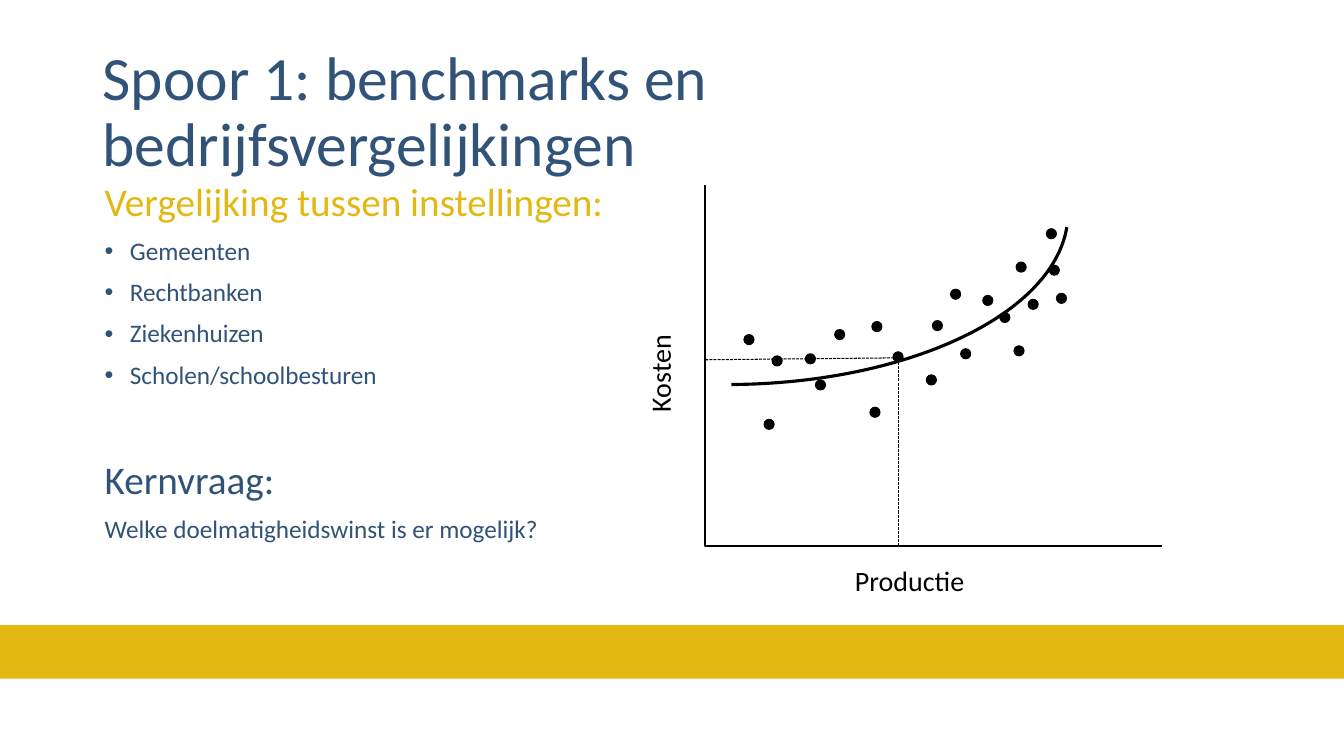
from lxml import etree
from pptx import Presentation
from pptx.dml.color import RGBColor
from pptx.enum.dml import MSO_LINE
from pptx.enum.shapes import MSO_CONNECTOR, MSO_SHAPE
from pptx.enum.text import MSO_ANCHOR
from pptx.oxml.ns import qn
from pptx.util import Pt

STRAIGHT = MSO_CONNECTOR.STRAIGHT
RECTANGLE, OVAL, ARC = MSO_SHAPE.RECTANGLE, MSO_SHAPE.OVAL, MSO_SHAPE.ARC
TOP, MIDDLE = MSO_ANCHOR.TOP, MSO_ANCHOR.MIDDLE
SHORT_DASH = MSO_LINE.SQUARE_DOT

THEME = {
    "font": "Calibri",
    "blue": RGBColor(0x31, 0x53, 0x78),
    "gold": RGBColor(0xE3, 0xB8, 0x13),
    "black": RGBColor(0, 0, 0),
    "title": 44,
    "heading": 28,
    "body": 18,
    "axis": 20,
}

# Each paragraph: text, size, colour and, where needed, spacing and bullet.
TITLE = [{"text": "Spoor 1: benchmarks en bedrijfsvergelijkingen",
          "size": "title", "color": "blue"}]
INSTITUTIONS = ["Gemeenten", "Rechtbanken", "Ziekenhuizen", "Scholen/schoolbesturen"]
BODY = [
    {"text": "Vergelijking tussen instellingen:", "size": "heading", "color": "gold",
     "before": 0},
    *({"text": name, "size": "body", "color": "blue", "before": 10, "bullet": True}
      for name in INSTITUTIONS),
    {"text": "Kernvraag:", "size": "heading", "color": "blue", "before": 50.8},
    {"text": "Welke doelmatigheidswinst is er mogelijk?", "size": "body",
     "color": "blue", "before": 10},
]
X_LABEL = [{"text": "Productie", "size": "axis", "color": "black"}]
Y_LABEL = [{"text": "Kosten", "size": "axis", "color": "black"}]

# Left and top of each observation in the scatter plot.
DOT_SIZE = 7.2
DOTS = [
    (531.4, 239), (545.8, 299.5), (551.5, 254.2), (575.3, 252.7), (582.5, 271.4),
    (596.2, 235.4), (621.4, 290.9), (622.8, 229.7), (637.9, 251.3), (661.7, 267.8),
    (666, 229), (679, 206.6), (686.2, 249.1), (702, 211), (714.2, 223.2),
    (724.3, 247), (725.8, 187.2), (734.4, 213.8), (747.4, 163.4), (749.5, 189.4),
    (754.6, 209.5),
]
AXIS_LEFT, AXIS_TOP, AXIS_RIGHT, AXIS_BOTTOM = 503.3, 132.5, 830.2, 390.2
MARK_X = 641.5
GUIDES = [
    ((MARK_X, 258.5), (MARK_X, AXIS_BOTTOM)),
    ((MARK_X, 255.6), (AXIS_LEFT, 257)),
]
CURVE_BOX = (396.7, -91.4, 244.8, 487.4)
CURVE_ANGLES = (272.36, 358.48)
ADJUSTMENT_PER_DEGREE = 0.6


def add_bullet(paragraph):
    properties = paragraph._p.get_or_add_pPr()
    properties.set("marL", str(Pt(18)))
    properties.set("indent", str(-Pt(18)))
    etree.SubElement(properties, qn("a:buFont")).set("typeface", "Arial")
    etree.SubElement(properties, qn("a:buChar")).set("char", "•")


def add_text(slide, box, paragraphs, line_spacing=1.0, **frame_format):
    shape = slide.shapes.add_textbox(*map(Pt, box))
    frame = shape.text_frame
    for name, value in {"word_wrap": True, "vertical_anchor": TOP, **frame_format}.items():
        setattr(frame, name, value)
    for index, content in enumerate(paragraphs):
        paragraph = frame.add_paragraph() if index else frame.paragraphs[0]
        paragraph.line_spacing = line_spacing
        paragraph.space_before = Pt(content.get("before", 0))
        if content.get("bullet"):
            add_bullet(paragraph)
        run = paragraph.add_run()
        run.text = content["text"]
        run.font.name = THEME["font"]
        run.font.size = Pt(THEME[content["size"]])
        run.font.color.rgb = THEME[content["color"]]
    return shape


def set_line(shape, width):
    shape.line.color.rgb = THEME["black"]
    shape.line.width = Pt(width)


def add_filled(slide, kind, box, color):
    shape = slide.shapes.add_shape(kind, *map(Pt, box))
    shape.shadow.inherit = False
    shape.fill.solid()
    shape.fill.fore_color.rgb = color
    shape.line.fill.background()
    return shape


def add_axes(slide):
    builder = slide.shapes.build_freeform(Pt(AXIS_LEFT), Pt(AXIS_TOP))
    builder.add_line_segments(
        [(Pt(AXIS_LEFT), Pt(AXIS_BOTTOM)), (Pt(AXIS_RIGHT), Pt(AXIS_BOTTOM))],
        close=False)
    axes = builder.convert_to_shape()
    axes.shadow.inherit = False
    axes.fill.background()
    set_line(axes, 1.5)


def add_cost_curve(slide):
    curve = slide.shapes.add_shape(ARC, *map(Pt, CURVE_BOX))
    curve.shadow.inherit = False
    curve.fill.background()
    curve.rotation = 90
    for index, angle in enumerate(CURVE_ANGLES):
        curve.adjustments[index] = angle * ADJUSTMENT_PER_DEGREE
    set_line(curve, 2.25)


def add_guide(slide, start, end):
    guide = slide.shapes.add_connector(STRAIGHT, *map(Pt, start + end))
    set_line(guide, 0.75)
    guide.line.dash_style = SHORT_DASH
    etree.SubElement(guide._element.spPr, qn("a:effectLst"))


def main():
    presentation = Presentation()
    presentation.slide_width, presentation.slide_height = Pt(960), Pt(540)
    slide = presentation.slides.add_slide(presentation.slide_layouts[6])

    add_filled(slide, RECTANGLE, (0, 446.6, 960, 38.2), THEME["gold"])
    add_text(slide, (66.2, 28.8, 828, 104.4), TITLE, 0.9, vertical_anchor=MIDDLE)
    add_text(slide, (67.7, 126.7, 375.8, 310.3), BODY, 0.9)

    add_axes(slide)
    add_text(slide, (610.6, 402.5, 80.6, 24.5), X_LABEL, word_wrap=False,
             margin_left=0, margin_right=0, margin_top=0, margin_bottom=0)
    add_text(slide, (428.4, 242.6, 86.4, 31.7), Y_LABEL).rotation = 270
    add_cost_curve(slide)
    for left, top in DOTS:
        dot = add_filled(slide, OVAL, (left, top, DOT_SIZE, DOT_SIZE), THEME["black"])
        set_line(dot, 0)
    for start, end in GUIDES:
        add_guide(slide, start, end)

    presentation.save("out.pptx")


if __name__ == "__main__":
    main()
